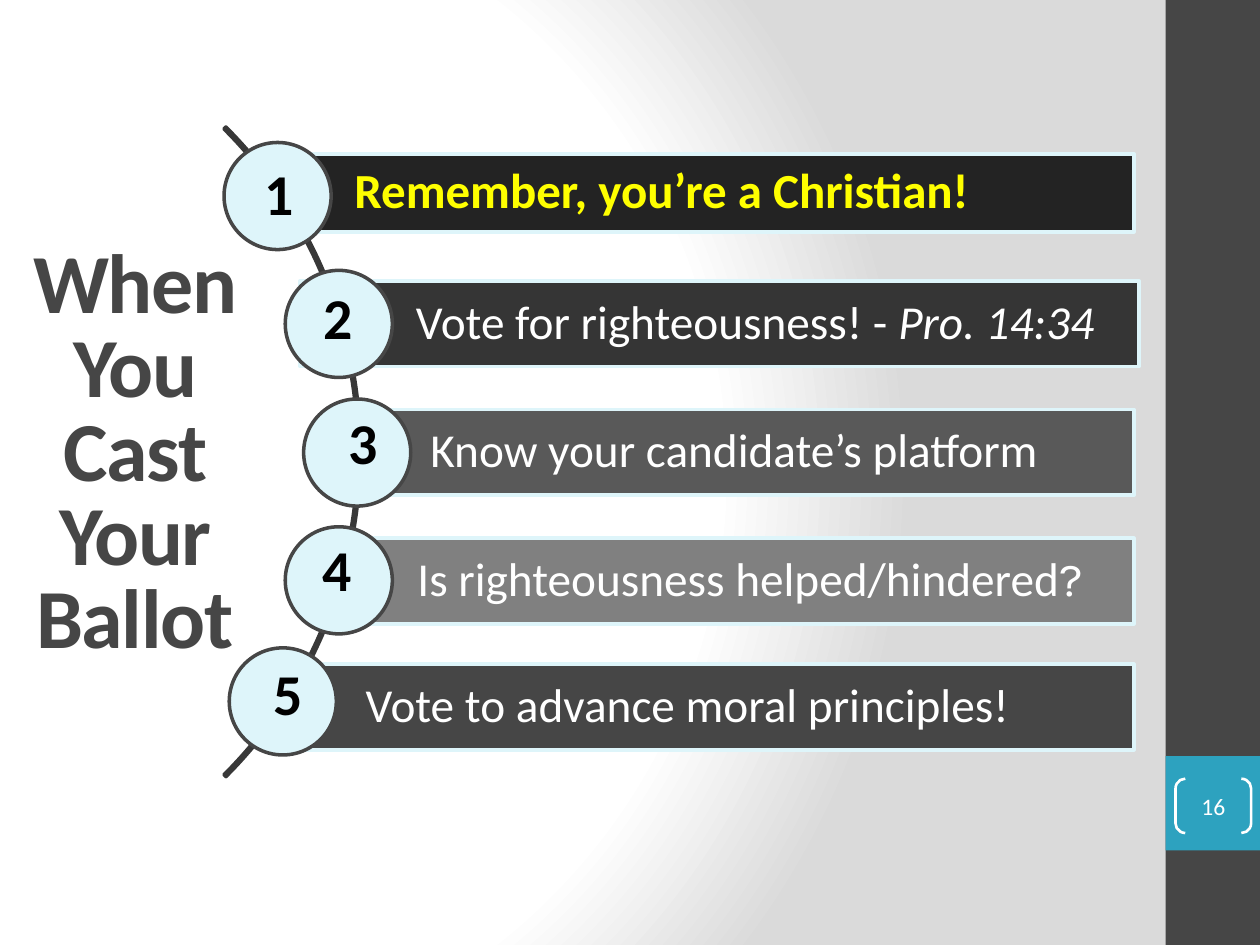
import pptx
import pptx.util
import pptx.dml.color
import pptx.enum.shapes
import pptx.enum.text
import pptx.oxml
import pptx.oxml.ns

Pt = pptx.util.Pt
SHAPE = pptx.enum.shapes.MSO_SHAPE
ALIGN = pptx.enum.text.PP_ALIGN
ANCHOR = pptx.enum.text.MSO_ANCHOR

DARK, PALE, WHITE = "464646", "DEF5FA", "FFFFFF"
DISC = 61.2

# Bar box, bar colour, text inset, disc corner, number corner, text runs
POINTS = [
    ((163.5, 88, 484.5, 44.5), "232323", 39, (128, 81.4), (144, 86.4),
     [("Remember, you’re a Christian!", {"size": 28, "color": "FFFF00", "bold": True})]),
    ((171.5, 160.5, 479.5, 49), "353535", 46, (163, 154.5), (178, 157.7),
     [("Vote for righteousness! - ", {}), ("Pro. 14:34", {"italic": True})]),
    ((196.5, 234, 451.5, 49), "595959", 49.5, (173.5, 228), (192.2, 229),
     [("Know your candidate’s platform", {})]),
    ((195, 307.5, 453, 49), "808080", 43.5, (163, 301), (177, 301.7),
     [("Is righteousness helped/hindered", {}), ("?", {"font": "Karla"})]),
    ((152, 379.5, 496, 49), DARK, 57, (131, 370.2), (149, 372.2),
     [("Vote to advance moral principles!", {})]),
]


def rgb(value):
    return pptx.dml.color.RGBColor.from_string(value)


def add_text(paragraph, text, size=27, color=WHITE, font="Calibri",
             bold=False, italic=False):
    run = paragraph.add_run()
    run.text = text
    run.font.name = font
    run.font.size = Pt(size)
    run.font.bold = bold
    run.font.italic = italic
    run.font.color.rgb = rgb(color)
    return run


def add_panel(slide, kind, box, fill=None, line=None, weight=2):
    panel = slide.shapes.add_shape(kind, *map(Pt, box))
    panel.shadow.inherit = False
    if fill:
        panel.fill.solid()
        panel.fill.fore_color.rgb = rgb(fill)
    else:
        panel.fill.background()
    if line:
        panel.line.color.rgb = rgb(line)
        panel.line.width = Pt(weight)
    else:
        panel.line.fill.background()
    return panel


def set_frame(frame, left=0, right=0, top=0, bottom=0, anchor=ANCHOR.MIDDLE):
    frame.word_wrap = True
    frame.vertical_anchor = anchor
    frame.margin_left, frame.margin_right = Pt(left), Pt(right)
    frame.margin_top, frame.margin_bottom = Pt(top), Pt(bottom)
    return frame.paragraphs[0]


def paint_background(slide):
    slide.background.fill.solid()
    properties = slide._element.find(".//" + pptx.oxml.ns.qn("p:bgPr"))
    stops = "".join(
        f'<a:gs pos="{place * 1000}"><a:srgbClr val="{color}"/></a:gs>'
        for place, color in ((0, WHITE), (75, WHITE), (100, "DADADA")))
    gradient = pptx.oxml.parse_xml(
        f'<a:gradFill {pptx.oxml.ns.nsdecls("a")} rotWithShape="1">'
        f'<a:gsLst>{stops}</a:gsLst><a:path path="circle">'
        '<a:fillToRect l="20000" t="50000" r="100000" b="50000"/>'
        '</a:path></a:gradFill>')
    properties.replace(properties[0], gradient)


def build_sidebar(slide, box, number):
    left, top, width, height = box
    add_panel(slide, SHAPE.RECTANGLE, box, fill=DARK)
    add_panel(slide, SHAPE.RECTANGLE, (left, top + 432, width, width), fill="2DA2BF")
    brackets = add_panel(slide, SHAPE.DOUBLE_BRACKET,
                         (left + 5.75, top + 445, 43.2, 31), line=WHITE, weight=1.5)
    brackets.adjustments[0] = 0.18
    paragraph = set_frame(brackets.text_frame)
    paragraph.alignment = ALIGN.CENTER
    add_text(paragraph, number, size=13.5)


def build_title(slide, box, text):
    title = slide.shapes.title
    title.left, title.top, title.width, title.height = map(Pt, box)
    title.text_frame.auto_size = pptx.enum.text.MSO_AUTO_SIZE.NONE
    paragraph = set_frame(title.text_frame, 7.2, 7.2, 3.6, 3.6)
    paragraph.alignment = ALIGN.CENTER
    paragraph.line_spacing = Pt(48)
    run = add_text(paragraph, text, size=48, color=DARK, bold=True)
    run.font._element.set("spc", "-80")


def build_arc(slide, box):
    arc = add_panel(slide, SHAPE.BLOCK_ARC, box, line="383838")
    for index, value in enumerate((189, 27, 0.003)):
        arc.adjustments[index] = value


def build_point(slide, box, number, color, inset, disc_corner, number_corner, runs):
    # Bar with its statement
    bar = add_panel(slide, SHAPE.RECTANGLE, box, fill=color, line=PALE)
    paragraph = set_frame(bar.text_frame, inset, 5.5, 5.5, 5.5)
    paragraph.alignment = ALIGN.CENTER if number == 2 else ALIGN.LEFT
    paragraph.line_spacing = 0.9
    for text, style in runs:
        add_text(paragraph, text, **style)
    # Numbered disc
    add_panel(slide, SHAPE.OVAL, (*disc_corner, DISC, DISC), fill=PALE, line=DARK)
    label = slide.shapes.add_textbox(*map(Pt, (*number_corner, 33, 47.5)))
    paragraph = set_frame(label.text_frame, 7.2, 7.2, 3.6, 3.6, ANCHOR.TOP)
    add_text(paragraph, str(number), size=33, color="000000", bold=True)


def main():
    deck = pptx.Presentation()
    deck.slide_width, deck.slide_height = Pt(720), Pt(540)
    slide = deck.slides.add_slide(deck.slide_layouts[5])
    paint_background(slide)
    build_sidebar(slide, (666, 0, 54, 540), "16")
    build_title(slide, (2, 133, 150, 255), "When You Cast Your Ballot")
    build_arc(slide, (-319, -4.3, 525, 525))
    for number, (box, *details) in enumerate(POINTS, 1):
        build_point(slide, box, number, *details)
    deck.save("out.pptx")


if __name__ == "__main__":
    main()
